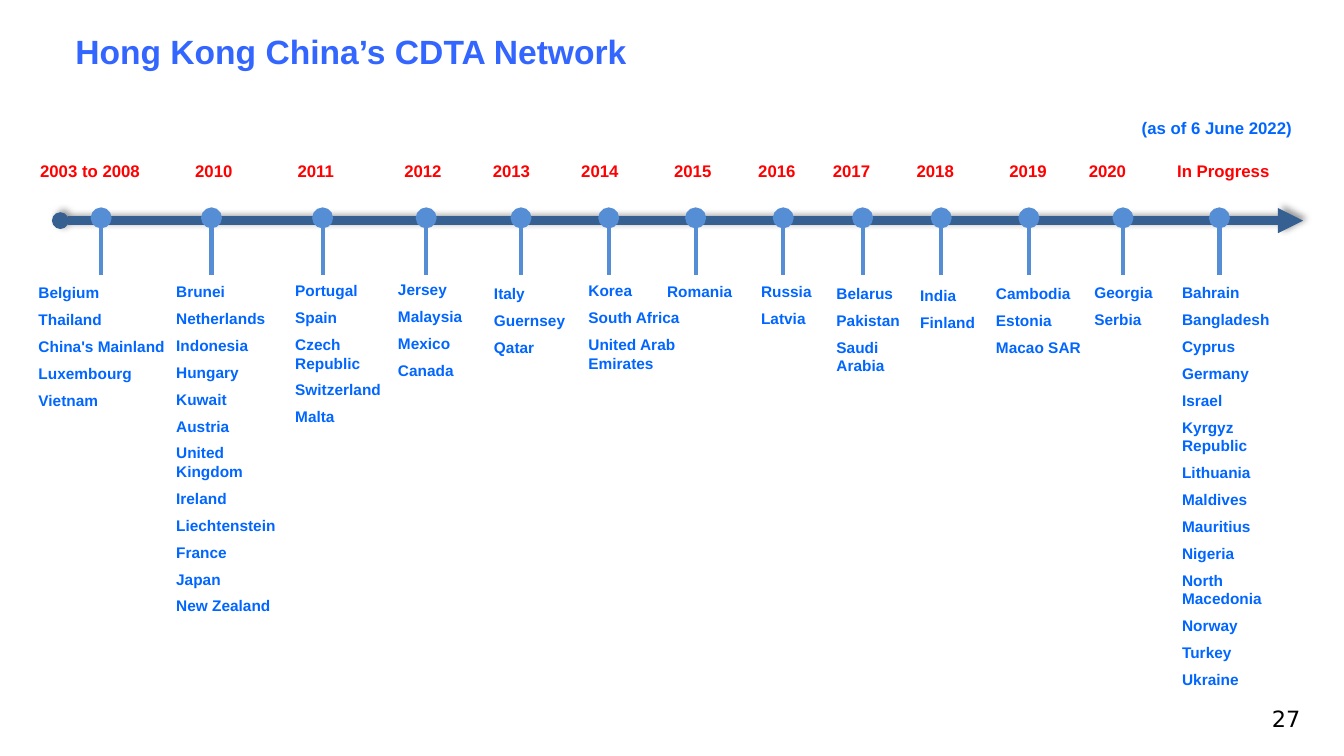
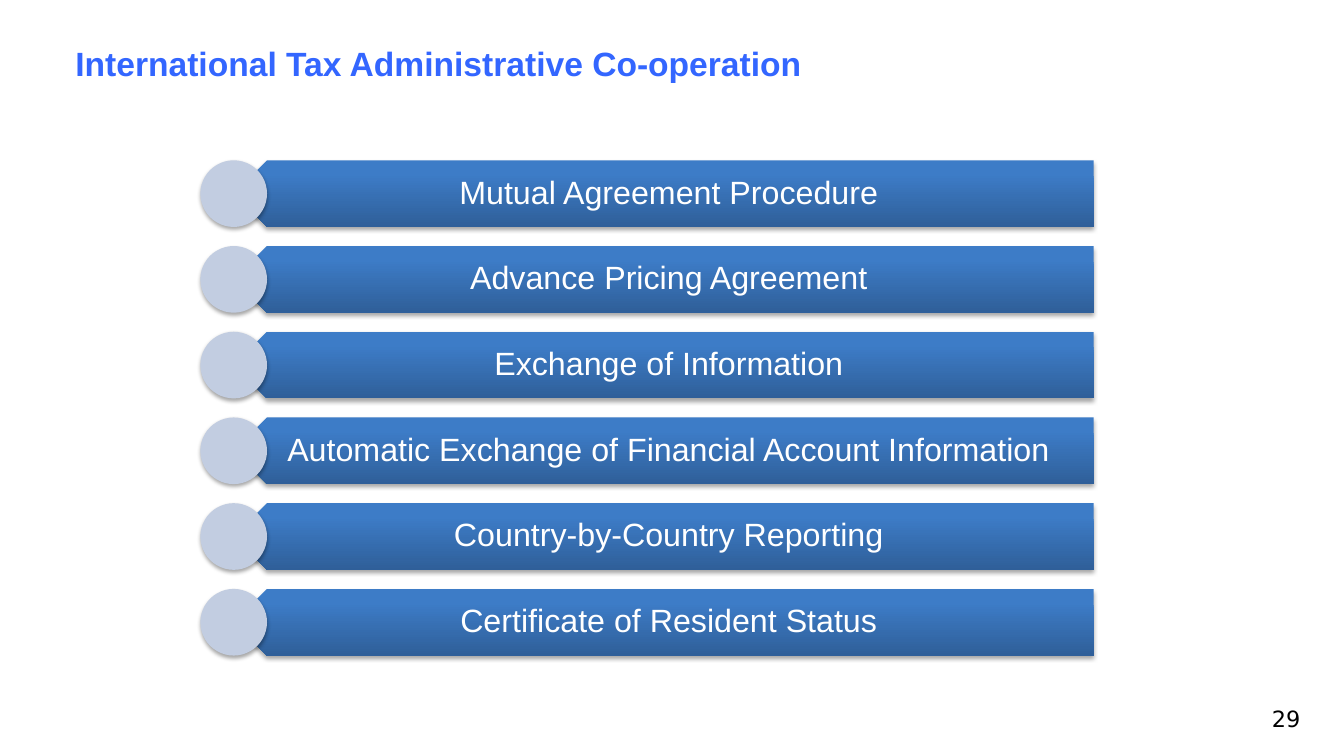
from dataclasses import dataclass

from lxml.etree import SubElement
from pptx import Presentation
from pptx.dml.color import RGBColor
from pptx.enum.shapes import MSO_CONNECTOR, MSO_SHAPE
from pptx.enum.text import MSO_ANCHOR, PP_ALIGN
from pptx.oxml.ns import qn
from pptx.util import Cm, Pt


@dataclass(frozen=True)
class Theme:
    font: str = "Arial"
    num_font: str = "DejaVu Sans"
    title: str = "3366FF"
    body: str = "0066FF"
    year: str = "FF0000"
    axis: str = "376092"
    stem: str = "558ED5"
    bar_top: str = "3D7CC7"
    bar_end: str = "2F5F99"
    dot: str = "C2CDE1"
    white: str = "FFFFFF"
    black: str = "000000"
    title_size: int = 24
    bar_size: int = 23
    num_size: int = 16
    year_size: int = 12
    list_size: int = 11


def write(shape, lines, size, color, bold=True, align=PP_ALIGN.LEFT, font=None):
    """Fill a shape with one paragraph per line, without margins."""
    frame = shape.text_frame
    frame.word_wrap = True
    frame.margin_left = frame.margin_right = 0
    frame.margin_top = frame.margin_bottom = 0
    frame.text = "\n".join(lines)
    for i, para in enumerate(frame.paragraphs):
        para.alignment = align
        if i:
            para.space_before = Pt(6)
        for run in para.runs:
            run.font.name = font or theme.font
            run.font.size = Pt(size)
            run.font.bold = bold
            run.font.color.rgb = RGBColor.from_string(color)


def shade(shape, blur=0, dist=0, angle=0, alpha=0):
    """Replace the inherited shadow by the given one, or by none."""
    effects = SubElement(shape._element.spPr, qn("a:effectLst"))
    if alpha:
        shadow = SubElement(effects, qn("a:outerShdw"), blurRad=str(Pt(blur)),
                            dist=str(Pt(dist)), dir=str(angle * 60000),
                            algn="ctr", rotWithShape="0")
        tint = SubElement(shadow, qn("a:srgbClr"), val=theme.black)
        SubElement(tint, qn("a:alpha"), val=str(alpha * 1000))


theme = Theme()
deck = Presentation()
deck.slide_width, deck.slide_height = Cm(33.87), Cm(19.05)

# Title and page number of both slides
slides = []
for title, top, page in (
    ("Hong Kong China’s CDTA Network", 0.79, "27"),
    ("International Tax Administrative Co-operation", 1.09, "29"),
):
    slide = deck.slides.add_slide(deck.slide_layouts[6])
    box = slide.shapes.add_textbox(Cm(1.9), Cm(top), Cm(28), Cm(1.6))
    write(box, [title], theme.title_size, theme.title)
    box = slide.shapes.add_textbox(Cm(28.77), Cm(17.78), Cm(4), Cm(0.8))
    write(box, [page], theme.num_size, theme.black, False,
          PP_ALIGN.RIGHT, theme.num_font)
    slides.append(slide)
network, services = slides

# Timeline: year, year centre, stem, list left, list top, list width, places
columns = (
    ("2003 to 2008", 2.27, 2.55, 0.97, 7.14, 3.4,
     ("Belgium", "Thailand", "China's Mainland", "Luxembourg", "Vietnam")),
    ("2010", 5.39, 5.33, 4.44, 7.11, 2.8,
     ("Brunei", "Netherlands", "Indonesia", "Hungary", "Kuwait", "Austria",
      "United Kingdom", "Ireland", "Liechtenstein", "France", "Japan",
      "New Zealand")),
    ("2011", 7.96, 8.13, 7.44, 7.09, 2.5,
     ("Portugal", "Spain", "Czech Republic", "Switzerland", "Malta")),
    ("2012", 10.66, 10.74, 10.03, 7.06, 2.1,
     ("Jersey", "Malaysia", "Mexico", "Canada")),
    ("2013", 12.89, 13.13, 12.45, 7.16, 2.2,
     ("Italy", "Guernsey", "Qatar")),
    ("2014", 15.12, 15.34, 14.83, 7.09, 2.5,
     ("Korea", "South Africa", "United Arab Emirates")),
    ("2015", 17.46, 17.53, 16.81, 7.11, 2, ("Romania",)),
    ("2016", 19.58, 19.74, 19.18, 7.11, 1.8, ("Russia", "Latvia")),
    ("2017", 21.46, 21.74, 21.08, 7.16, 2.05,
     ("Belarus", "Pakistan", "Saudi Arabia")),
    ("2018", 23.57, 23.72, 23.19, 7.21, 1.8, ("India", "Finland")),
    ("2019", 25.91, 25.93, 25.1, 7.16, 2.4,
     ("Cambodia", "Estonia", "Macao SAR")),
    ("2020", 27.91, 28.3, 27.58, 7.14, 2, ("Georgia", "Serbia")),
    ("In Progress", 30.83, 30.73, 29.79, 7.14, 2.6,
     ("Bahrain", "Bangladesh", "Cyprus", "Germany", "Israel",
      "Kyrgyz Republic", "Lithuania", "Maldives", "Mauritius", "Nigeria",
      "North Macedonia", "Norway", "Turkey", "Ukraine")),
)

box = network.shapes.add_textbox(Cm(25.06), Cm(2.97), Cm(7.5), Cm(0.6))
write(box, ["(as of 6 June 2022)"], theme.year_size, theme.body,
      align=PP_ALIGN.RIGHT)

lines = [(1.52, 5.56, 32.84, 5.56, theme.axis, 6, "sm")]
lines += [(col[2], 5.49, col[2], 6.94, theme.stem, 3, "lg") for col in columns]
for x1, y1, x2, y2, color, width, size in lines:
    line = network.shapes.add_connector(
        MSO_CONNECTOR.STRAIGHT, Cm(x1), Cm(y1), Cm(x2), Cm(y2))
    line.line.color.rgb = RGBColor.from_string(color)
    line.line.width = Pt(width)
    stroke = line._element.spPr.find(qn("a:ln"))
    SubElement(stroke, qn("a:headEnd"), type="oval", w=size, len=size)
    if color == theme.axis:
        SubElement(stroke, qn("a:tailEnd"), type="triangle")
        shade(line, blur=4, dist=3, angle=315, alpha=40)
    else:
        shade(line)

for year, mid, stem, left, top, width, places in columns:
    box = network.shapes.add_textbox(Cm(mid - 1.5), Cm(4.05), Cm(3), Cm(0.6))
    write(box, [year], theme.year_size, theme.year, align=PP_ALIGN.CENTER)
    box = network.shapes.add_textbox(
        Cm(left), Cm(top), Cm(width), Cm(0.68 * len(places)))
    write(box, places, theme.list_size, theme.body)

# Services: a bar with a disc at its left end
height, pitch = 1.68, 2.16
for i, name in enumerate((
    "Mutual Agreement Procedure",
    "Advance Pricing Agreement",
    "Exchange of Information",
    "Automatic Exchange of Financial Account Information",
    "Country-by-Country Reporting",
    "Certificate of Resident Status",
)):
    top = Cm(4.04 + i * pitch)
    bar = services.shapes.add_shape(
        MSO_SHAPE.PENTAGON, Cm(5.89), top, Cm(21.67), Cm(height))
    bar._element.spPr.xfrm.set("flipH", "1")
    bar.fill.gradient()
    bar.fill.gradient_angle = 270
    for stop, color, place in zip(bar.fill.gradient_stops,
                                  (theme.bar_top, theme.bar_end), (0.2, 1)):
        stop.color.rgb = RGBColor.from_string(color)
        stop.position = place
    write(bar, [name], theme.bar_size, theme.white, False, PP_ALIGN.CENTER)
    frame = bar.text_frame
    frame.vertical_anchor = MSO_ANCHOR.MIDDLE
    frame.margin_left, frame.margin_right = Cm(0.32), Cm(0.46)
    frame.paragraphs[0].line_spacing = 0.9

    disc = services.shapes.add_shape(
        MSO_SHAPE.OVAL, Cm(5.05), top, Cm(height), Cm(height))
    disc.fill.solid()
    disc.fill.fore_color.rgb = RGBColor.from_string(theme.dot)
    for shape in (bar, disc):
        shape.line.fill.background()
        shade(shape, blur=3.1, dist=1.8, angle=90, alpha=35)

deck.save("out.pptx")
